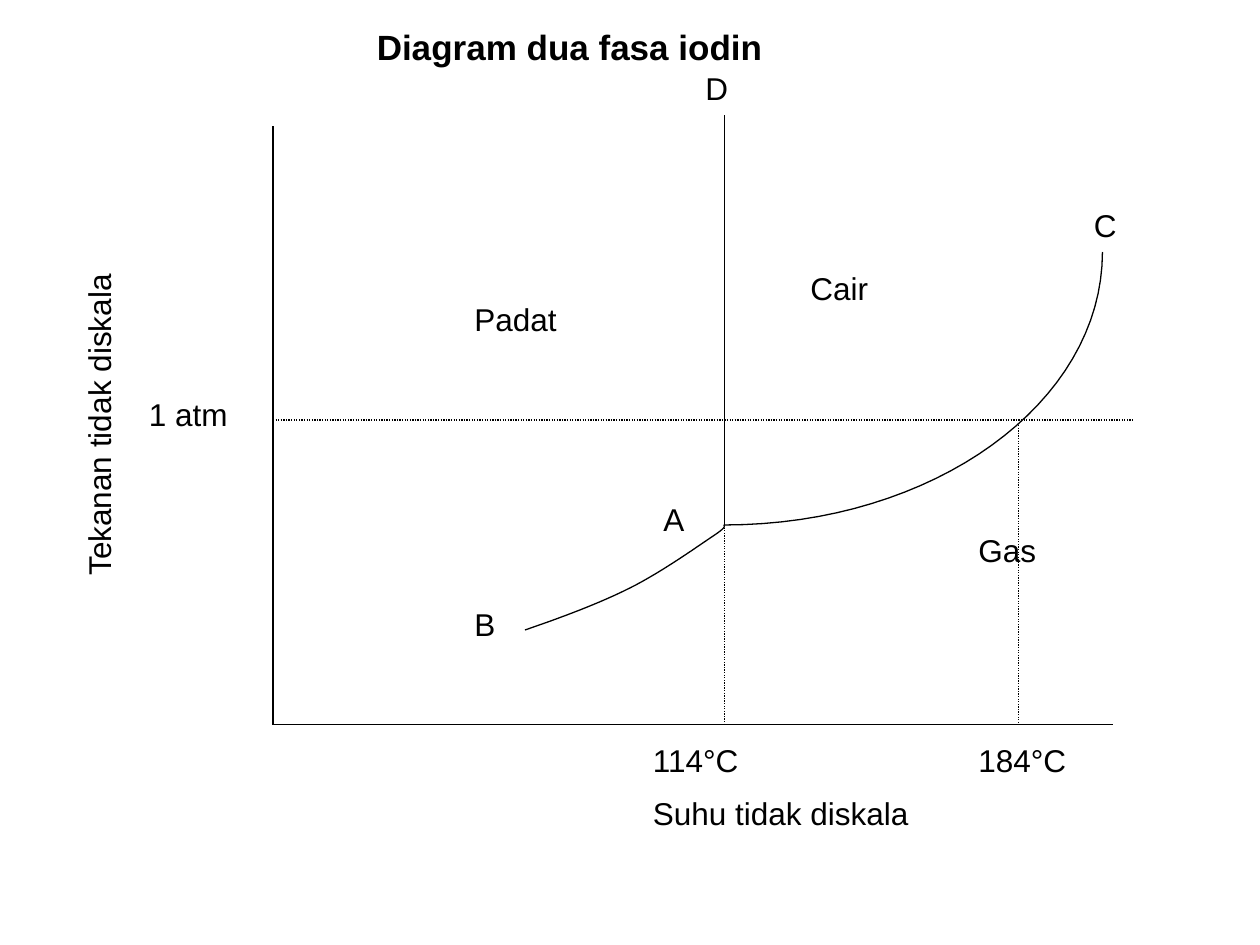
import pptx
import pptx.util
import pptx.dml.color
import pptx.enum.dml
import pptx.enum.shapes
import pptx.enum.text
import pptx.oxml.ns
import lxml.etree

THEME = {
    "font": "Arial",
    "ink": pptx.dml.color.RGBColor(0, 0, 0),
    "title_size": pptx.util.Pt(20),
    "label_size": pptx.util.Pt(18),
    "line_width": pptx.util.Pt(0.75),
}

presentation = pptx.Presentation()
presentation.slide_width = pptx.util.Inches(10)
presentation.slide_height = pptx.util.Inches(7.5)
slide = presentation.slides.add_slide(presentation.slide_layouts[6])

COLUMN = presentation.slide_width // 120
ROW = presentation.slide_height // 90
LABEL_ROWS = 4.8


def add_text(text, column, row, columns, rows=LABEL_ROWS, size=THEME["label_size"], bold=False, rotation=0):
    shape = slide.shapes.add_textbox(
        round(column * COLUMN), round(row * ROW), round(columns * COLUMN), round(rows * ROW)
    )
    shape.rotation = rotation
    shape.text_frame.word_wrap = True
    shape.text_frame.auto_size = pptx.enum.text.MSO_AUTO_SIZE.SHAPE_TO_FIT_TEXT
    paragraph = shape.text_frame.paragraphs[0]
    paragraph.text = text
    paragraph.font.name = THEME["font"]
    paragraph.font.size = size
    paragraph.font.bold = bold
    paragraph.font.color.rgb = THEME["ink"]


def bezier_points(start, first, second, end, steps=32):
    for step in range(1, steps + 1):
        t = step / steps
        weights = ((1 - t) ** 3, 3 * t * (1 - t) ** 2, 3 * t * t * (1 - t), t ** 3)
        controls = (start, first, second, end)
        column = sum(weight * point[0] for weight, point in zip(weights, controls))
        row = sum(weight * point[1] for weight, point in zip(weights, controls))
        yield round(column * COLUMN), round(row * ROW)


add_text("Diagram dua fasa iodin", 34.7, 1.8, 55.3, rows=5.3, size=THEME["title_size"], bold=True)

axis_column, axis_row = 26, 69
triple_column, triple_row = 69, 50
boiling_column, atmosphere_row = 97, 40

lines = [
    (axis_column, 12, axis_column, axis_row, False),
    (axis_column, axis_row, 106, axis_row, False),
    (axis_column, atmosphere_row, 108, atmosphere_row, True),
    (triple_column, triple_row, triple_column, axis_row, True),
    (triple_column, triple_row, triple_column, 11, False),
    (boiling_column, atmosphere_row, boiling_column, axis_row, True),
]
for start_column, start_row, end_column, end_row, dotted in lines:
    connector = slide.shapes.add_connector(
        pptx.enum.shapes.MSO_CONNECTOR.STRAIGHT,
        start_column * COLUMN, start_row * ROW, end_column * COLUMN, end_row * ROW,
    )
    connector.line.color.rgb = THEME["ink"]
    connector.line.width = THEME["line_width"]
    if dotted:
        connector.line.dash_style = pptx.enum.dml.MSO_LINE.ROUND_DOT
    lxml.etree.SubElement(connector._element.spPr, pptx.oxml.ns.qn("a:effectLst"))

triple_point = (triple_column, triple_row)
boiling_curve = [(triple_point, (88.9, triple_row), (105, 38.4), (105, 24))]
sublimation_curve = [
    ((50, 60), (53.5, 58.8), (57, 57.5), (60, 56)),
    ((60, 56), (63, 54.5), (66.5, 52), (68, 51)),
    ((68, 51), (69.5, 50), (68.8, 50.1), triple_point),
]
for curve in (boiling_curve, sublimation_curve):
    start_column, start_row = curve[0][0]
    builder = slide.shapes.build_freeform(start_column * COLUMN, start_row * ROW)
    for segment in curve:
        builder.add_line_segments(bezier_points(*segment), close=False)
    shape = builder.convert_to_shape()
    shape.shadow.inherit = False
    shape.fill.background()
    shape.line.color.rgb = THEME["ink"]
    shape.line.width = THEME["line_width"]

labels = [
    ("B", 44, 57, 6),
    ("A", 62, 47, 5),
    ("C", 103, 19, 7),
    ("D", 66, 6, 10),
    ("Padat", 44, 28, 20),
    ("Cair", 76, 25, 16),
    ("Gas", 92, 50, 16),
    ("1 atm", 13, 37, 11),
    ("114°C", 61, 70, 14),
    ("184°C", 92, 70, 14),
    ("Suhu tidak diskala", 61, 75, 56),
]
for text, column, row, columns in labels:
    add_text(text, column, row, columns)

add_text("Tekanan tidak diskala", -9.6, 34.6, 38, rotation=270)

presentation.save("out.pptx")
